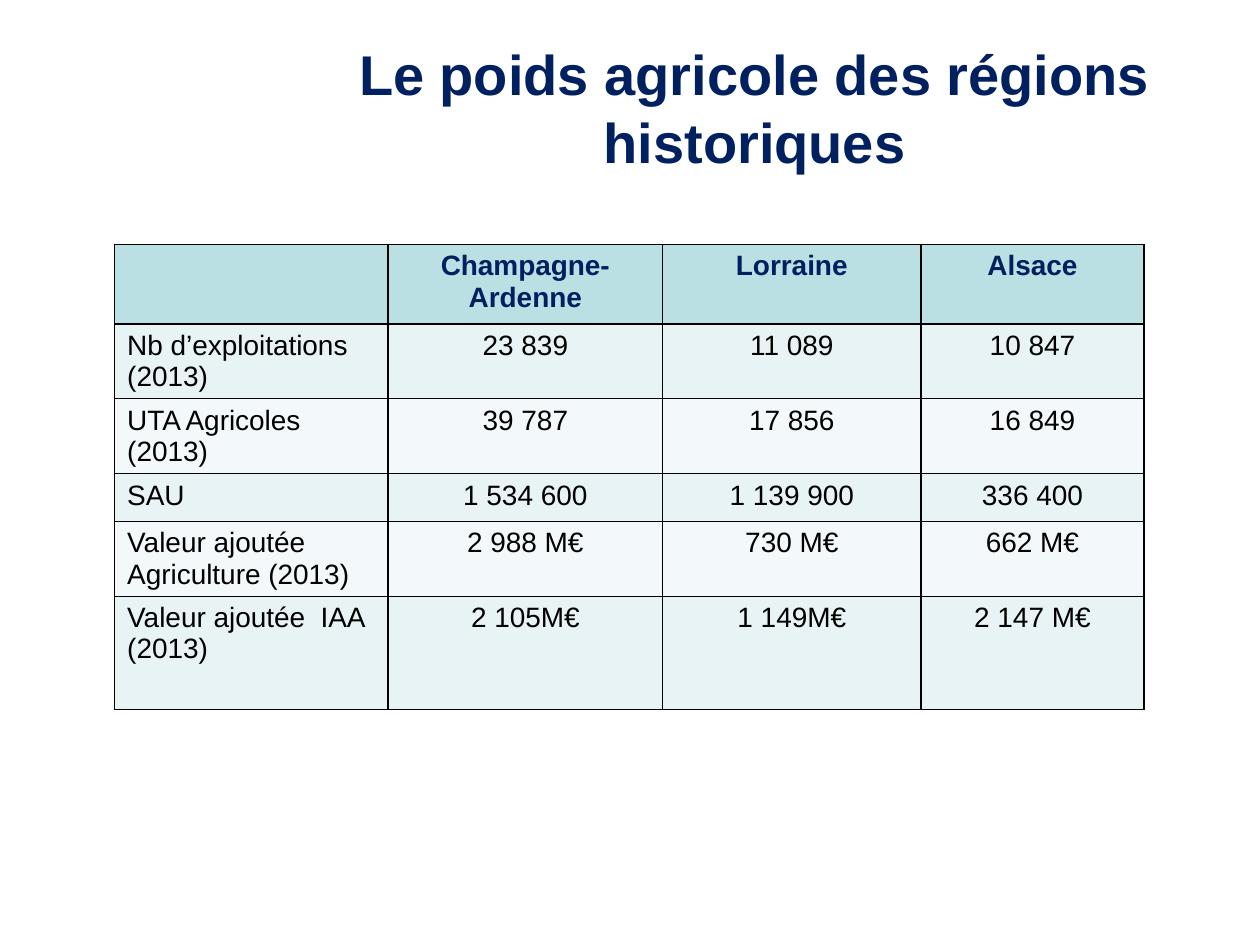
import dataclasses
import lxml.etree
import pptx
import pptx.dml.color
import pptx.enum.text
import pptx.oxml.ns
import pptx.util

Inches = pptx.util.Inches
Align = pptx.enum.text.PP_ALIGN


@dataclasses.dataclass(frozen=True)
class Theme:
    font: str = "Arial"
    navy: str = "002060"
    black: str = "000000"
    head: str = "BBE0E3"
    bands: tuple = ("E7F3F4", "F3F9FA")
    title: int = 32
    body: int = 16
    line: int = 1


class Deck:
    def __init__(self, theme):
        self.theme = theme
        self.file = pptx.Presentation()
        self.file.slide_width = Inches(10)
        self.file.slide_height = Inches(7.5)
        self.slide = self.file.slides.add_slide(self.file.slide_layouts[5])

    def label(self, frame, text, size, color, bold, align):
        line = frame.paragraphs[0]
        line.alignment = align
        run = line.add_run()
        run.text = text
        run.font.name = self.theme.font
        run.font.size = pptx.util.Pt(size)
        run.font.bold = bold
        run.font.color.rgb = pptx.dml.color.RGBColor.from_string(color)

    def title(self, text, left, top, width, height):
        box = self.slide.shapes.title
        box.left, box.top = Inches(left), Inches(top)
        box.width, box.height = Inches(width), Inches(height)
        frame = box.text_frame
        frame.word_wrap = True
        frame.auto_size = pptx.enum.text.MSO_AUTO_SIZE.NONE
        frame.vertical_anchor = pptx.enum.text.MSO_ANCHOR.MIDDLE
        self.label(frame, text, self.theme.title, self.theme.navy, True, Align.CENTER)

    def border(self, cell):
        props = cell._tc.get_or_add_tcPr()
        name = pptx.oxml.ns.qn
        for side in ("lnL", "lnR", "lnT", "lnB"):
            edge = lxml.etree.SubElement(props, name(f"a:{side}"), w=str(pptx.util.Pt(self.theme.line)))
            fill = lxml.etree.SubElement(edge, name("a:solidFill"))
            lxml.etree.SubElement(fill, name("a:srgbClr"), val=self.theme.black)

    def cell(self, cell, text, row, col):
        theme = self.theme
        head = row == 0
        self.border(cell)
        cell.fill.solid()
        shade = theme.head if head else theme.bands[(row - 1) % 2]
        cell.fill.fore_color.rgb = pptx.dml.color.RGBColor.from_string(shade)
        if text:
            color = theme.navy if head else theme.black
            align = Align.CENTER if col else Align.LEFT
            self.label(cell.text_frame, text, theme.body, color, head, align)

    def table(self, data, left, top, widths, heights):
        grid = self.slide.shapes.add_table(
            len(heights), len(widths), Inches(left), Inches(top),
            Inches(sum(widths)), Inches(sum(heights))).table
        for col, width in zip(grid.columns, widths):
            col.width = Inches(width)
        for row, height in zip(grid.rows, heights):
            row.height = Inches(height)
        for row, texts in enumerate(data):
            for col, text in enumerate(texts):
                self.cell(grid.cell(row, col), text, row, col)


def main():
    deck = Deck(Theme())
    deck.title("Le poids agricole des régions historiques", 2.56, 0.26, 6.86, 1.18)
    data = (
        ("", "Champagne-Ardenne", "Lorraine", "Alsace"),
        ("Nb d’exploitations (2013)", "23 839", "11 089", "10 847"),
        ("UTA Agricoles (2013)", "39 787", "17 856", "16 849"),
        ("SAU", "1 534 600", "1 139 900", "336 400"),
        ("Valeur ajoutée Agriculture (2013)", "2 988 M€", "730 M€", "662 M€"),
        ("Valeur ajoutée  IAA (2013)", "2 105M€", "1 149M€", "2 147 M€"),
    )
    deck.table(data, 0.91, 1.94, (2.17, 2.18, 2.05, 1.77),
               (0.63, 0.49, 0.52, 0.38, 0.58, 0.9))
    deck.file.save("out.pptx")


if __name__ == "__main__":
    main()
